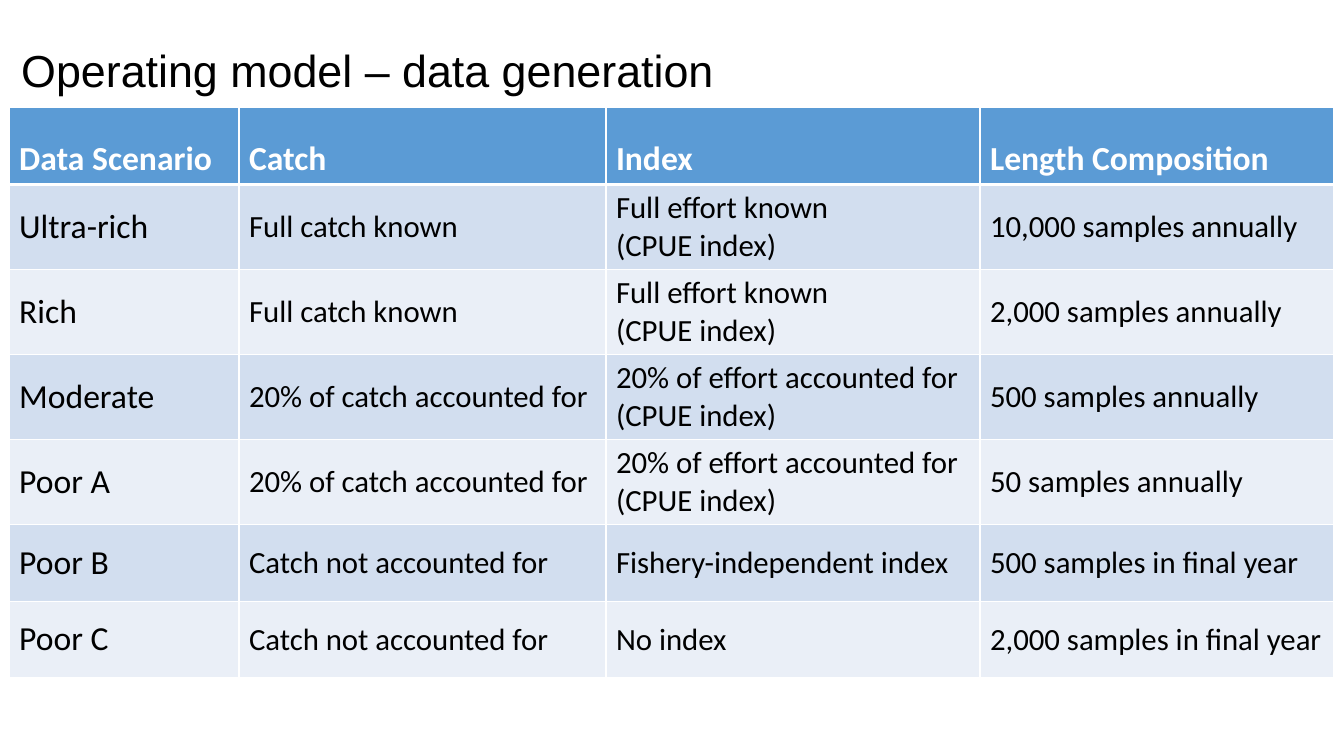
from lxml import etree
from pptx import Presentation
from pptx import util as u
from pptx.dml.color import RGBColor
from pptx.enum import text
from pptx.oxml.ns import qn

COLORS = {"header": "5B9BD5", "odd": "D2DEEF", "even": "EAEFF7",
          "white": "FFFFFF", "black": "000000"}
COLUMN_WIDTHS = [2.28, 3.64, 3.71, 3.51]
ROW_HEIGHT = 0.76
TITLE_BOX = (0.11, 0, 11.66, 1.45)
TABLE_BOX = (0.09, 1.07, sum(COLUMN_WIDTHS), 7 * ROW_HEIGHT + 0.3)

SCENARIOS = [
    ["Data Scenario", "Catch", "Index", "Length Composition"],
    ["Ultra-rich", "Full catch known", "Full effort known\n(CPUE index)",
     "10,000 samples annually"],
    ["Rich", "Full catch known", "Full effort known\n(CPUE index)",
     "2,000 samples annually"],
    ["Moderate", "20% of catch accounted for",
     "20% of effort accounted for\n(CPUE index)", "500 samples annually"],
    ["Poor A", "20% of catch accounted for",
     "20% of effort accounted for\n(CPUE index)", "50 samples annually"],
    ["Poor B", "Catch not accounted for", "Fishery-independent index",
     "500 samples in final year"],
    ["Poor C", "Catch not accounted for", "No index",
     "2,000 samples in final year"],
]


def color(name):
    return RGBColor.from_string(COLORS[name])


def set_font(para, name, size, color_name, bold=False):
    para.font.name = name
    para.font.size = u.Pt(size)
    para.font.bold = bold
    para.font.color.rgb = color(color_name)


def set_borders(cell, top, bottom):
    """Draw white cell borders; widths are in points."""
    properties = cell._tc.get_or_add_tcPr()
    widths = {"a:lnL": 1, "a:lnR": 1, "a:lnT": top, "a:lnB": bottom}
    for position, (tag, width) in enumerate(widths.items()):
        line = etree.Element(qn(tag), w=str(u.Pt(width)))
        fill = etree.SubElement(line, qn("a:solidFill"))
        etree.SubElement(fill, qn("a:srgbClr"), val=COLORS["white"])
        properties.insert(position, line)


def add_title(page, box, wording):
    title = page.shapes.title
    title.left, title.top, title.width, title.height = map(u.Inches, box)
    frame = title.text_frame
    frame.text = wording
    frame.word_wrap = True
    frame.vertical_anchor = text.MSO_ANCHOR.MIDDLE
    para = frame.paragraphs[0]
    para.alignment = text.PP_ALIGN.LEFT
    para.line_spacing = 0.9
    set_font(para, "Arial", 32, "black")


def fill_cell(cell, wording, row, column):
    header = row == 0
    cell.text = wording
    cell.vertical_anchor = (text.MSO_ANCHOR.BOTTOM if header
                            else text.MSO_ANCHOR.MIDDLE)
    cell.fill.solid()
    cell.fill.fore_color.rgb = color(
        "header" if header else "odd" if row % 2 else "even")
    size = 24 if header or column == 0 else 22
    for para in cell.text_frame.paragraphs:
        set_font(para, "Calibri", size, "white" if header else "black", header)
    set_borders(cell, top=3 if row == 1 else 1, bottom=3 if header else 1)


def add_scenario_table(page, box, rows):
    frame = page.shapes.add_table(len(rows), len(rows[0]), *map(u.Inches, box))
    table = frame.table
    for column, width in zip(table.columns, COLUMN_WIDTHS):
        column.width = u.Inches(width)
    for row, wordings in enumerate(rows):
        table.rows[row].height = u.Inches(ROW_HEIGHT)
        for column, wording in enumerate(wordings):
            fill_cell(table.cell(row, column), wording, row, column)


def main():
    deck = Presentation()
    deck.slide_width, deck.slide_height = u.Inches(13.33), u.Inches(7.5)
    page = deck.slides.add_slide(deck.slide_layouts[5])  # title only
    add_title(page, TITLE_BOX, "Operating model – data generation")
    add_scenario_table(page, TABLE_BOX, SCENARIOS)
    deck.save("out.pptx")


if __name__ == "__main__":
    main()
